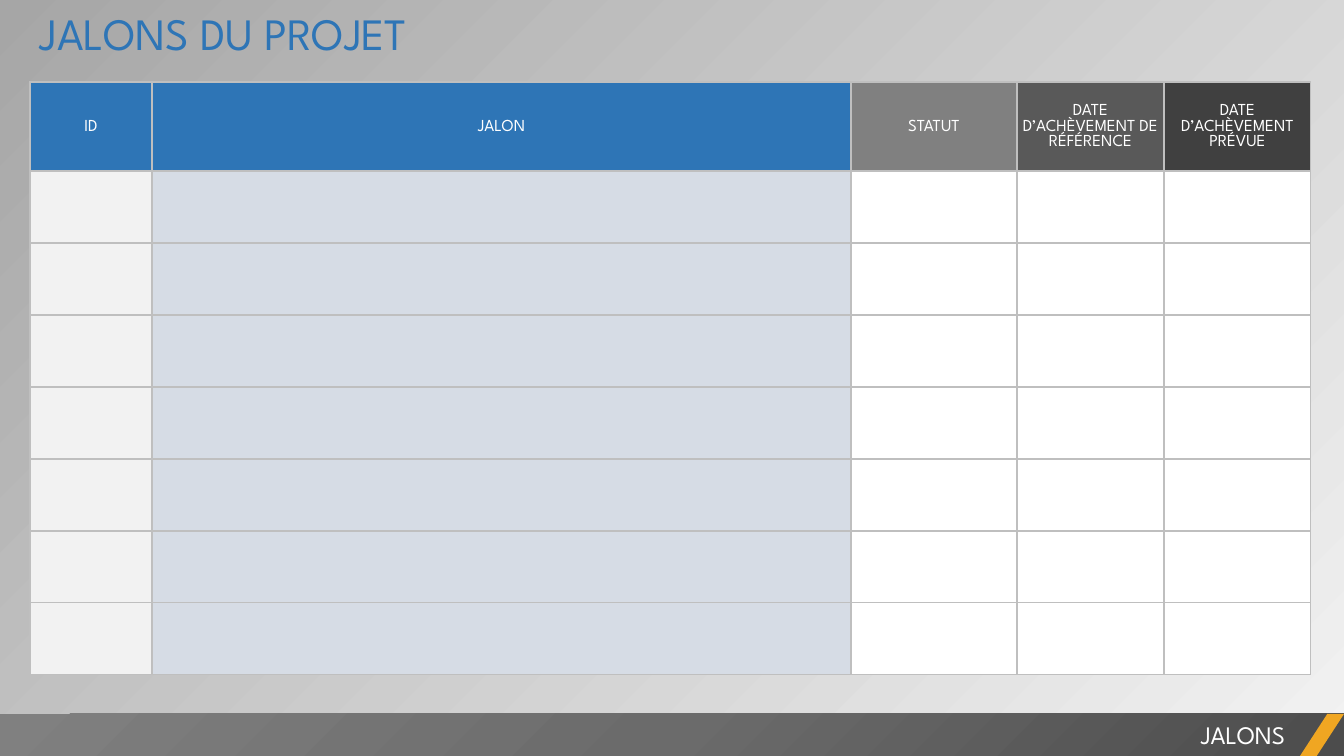
import lxml.etree
import pptx
import pptx.dml.color
import pptx.enum.shapes
import pptx.enum.text
import pptx.oxml.ns
import pptx.util
from dataclasses import dataclass

SCALE = 914400 / 100.8
SHAPES = pptx.enum.shapes.MSO_SHAPE
ALIGN = pptx.enum.text.PP_ALIGN
ANCHOR = pptx.enum.text.MSO_ANCHOR


@dataclass(frozen=True)
class Theme:
    font: str = "League Spartan"
    title_size: int = 32
    footer_size: int = 18
    header_size: int = 12
    blue: str = "2E75B6"
    white: str = "FFFFFF"
    id_fill: str = "F2F2F2"
    milestone_fill: str = "D6DCE5"
    border: str = "BFBFBF"
    accent: str = "F0A622"
    background: tuple = ("F2F2F2", "A6A6A6")
    footer: tuple = ("4C4C4C", "6B6B6B", "808080")


THEME = Theme()

# Heading, width in px, header fill, body fill
COLUMNS = [
    ("ID", 122, THEME.blue, THEME.id_fill),
    ("JALON", 699, THEME.blue, THEME.milestone_fill),
    ("STATUT", 166, "808080", THEME.white),
    ("DATE D’ACHÈVEMENT DE RÉFÉRENCE", 147, "595959", THEME.white),
    ("DATE D’ACHÈVEMENT PRÉVUE", 147, "404040", THEME.white),
]
HEADER_HEIGHT, ROW_HEIGHT, BODY_ROWS = 89, 72, 7


def px(n):
    return pptx.util.Emu(round(n * SCALE))


def rgb(value):
    return pptx.dml.color.RGBColor.from_string(value)


def sub(parent, tag, **attrs):
    return lxml.etree.SubElement(parent, pptx.oxml.ns.qn(tag), attrs)


def write(tf, text, *, size, color, align=ALIGN.LEFT):
    tf.word_wrap = True
    p = tf.paragraphs[0]
    p.alignment = align
    r = p.add_run()
    r.text = text
    r.font.name = THEME.font
    r.font.size = pptx.util.Pt(size)
    r.font.color.rgb = rgb(color)


def add_text(s, box, text, **fmt):
    write(s.shapes.add_textbox(*map(px, box)).text_frame, text, **fmt)


def add_plain_shape(s, kind, box):
    sp = s.shapes.add_shape(kind, *map(px, box))
    sp.shadow.inherit = False
    sp.line.fill.background()
    return sp


def fill_background(s):
    fill = s.background.fill
    fill.gradient()
    fill.gradient_angle = 135
    for stop, color in zip(fill.gradient_stops, THEME.background):
        stop.color.rgb = rgb(color)
    for stop, position in zip(fill.gradient_stops, (0, 1)):
        stop.position = position


def fill_radial(sp, colors):
    """Spread evenly spaced colours outwards from the bottom right corner."""
    grad = lxml.etree.Element(pptx.oxml.ns.qn("a:gradFill"), rotWithShape="1")
    stops = sub(grad, "a:gsLst")
    for i, color in enumerate(colors):
        gs = sub(stops, "a:gs", pos=str(100000 * i // (len(colors) - 1)))
        sub(gs, "a:srgbClr", val=color)
    radial = sub(grad, "a:path", path="circle")
    sub(radial, "a:fillToRect", l="100000", t="100000")
    geometry = sp.element.spPr.find(pptx.oxml.ns.qn("a:prstGeom"))
    geometry.addnext(grad)


def style_cell(cell, fill):
    cell.fill.solid()
    cell.fill.fore_color.rgb = rgb(fill)
    cell.vertical_anchor = ANCHOR.MIDDLE
    cell.margin_left = cell.margin_right = cell.margin_top = px(1)
    cell.margin_bottom = 0
    tc_pr = cell._tc.get_or_add_tcPr()
    for i, side in enumerate(("a:lnL", "a:lnR", "a:lnT", "a:lnB")):
        ln = sub(tc_pr, side, w=str(pptx.util.Pt(1)))
        sub(sub(ln, "a:solidFill"), "a:srgbClr", val=THEME.border)
        tc_pr.insert(i, ln)


def add_milestones(s, left, top):
    width = sum(column[1] for column in COLUMNS)
    height = HEADER_HEIGHT + BODY_ROWS * ROW_HEIGHT
    frame = s.shapes.add_table(BODY_ROWS + 1, len(COLUMNS),
                               *map(px, (left, top, width, height)))
    table = frame.table
    table.first_row = table.horz_banding = False
    for i, row in enumerate(table.rows):
        row.height = px(ROW_HEIGHT if i else HEADER_HEIGHT)
    for c, (heading, col_width, header_fill, body_fill) in enumerate(COLUMNS):
        table.columns[c].width = px(col_width)
        for i in range(BODY_ROWS + 1):
            style_cell(table.cell(i, c), body_fill if i else header_fill)
        write(table.cell(0, c).text_frame, heading, size=THEME.header_size,
              color=THEME.white, align=ALIGN.CENTER)


def add_footer(s):
    fill_radial(add_plain_shape(s, SHAPES.RECTANGLE, (0, 714, 1344, 42)),
                THEME.footer)
    stripe = add_plain_shape(s, SHAPES.PARALLELOGRAM, (1300, 714, 44, 42))
    stripe.adjustments[0] = 0.65
    stripe.fill.solid()
    stripe.fill.fore_color.rgb = rgb(THEME.accent)
    add_text(s, (529, 714, 766, 40), "JALONS", size=THEME.footer_size,
             color=THEME.white, align=ALIGN.RIGHT)


def main():
    prs = pptx.Presentation()
    prs.slide_width, prs.slide_height = px(1344), px(756)
    s = prs.slides.add_slide(prs.slide_layouts[6])
    fill_background(s)
    add_milestones(s, 30, 82)
    add_footer(s)
    add_text(s, (30, 1, 1289, 64), "JALONS DU PROJET",
             size=THEME.title_size, color=THEME.blue)
    prs.save("out.pptx")


if __name__ == "__main__":
    main()
